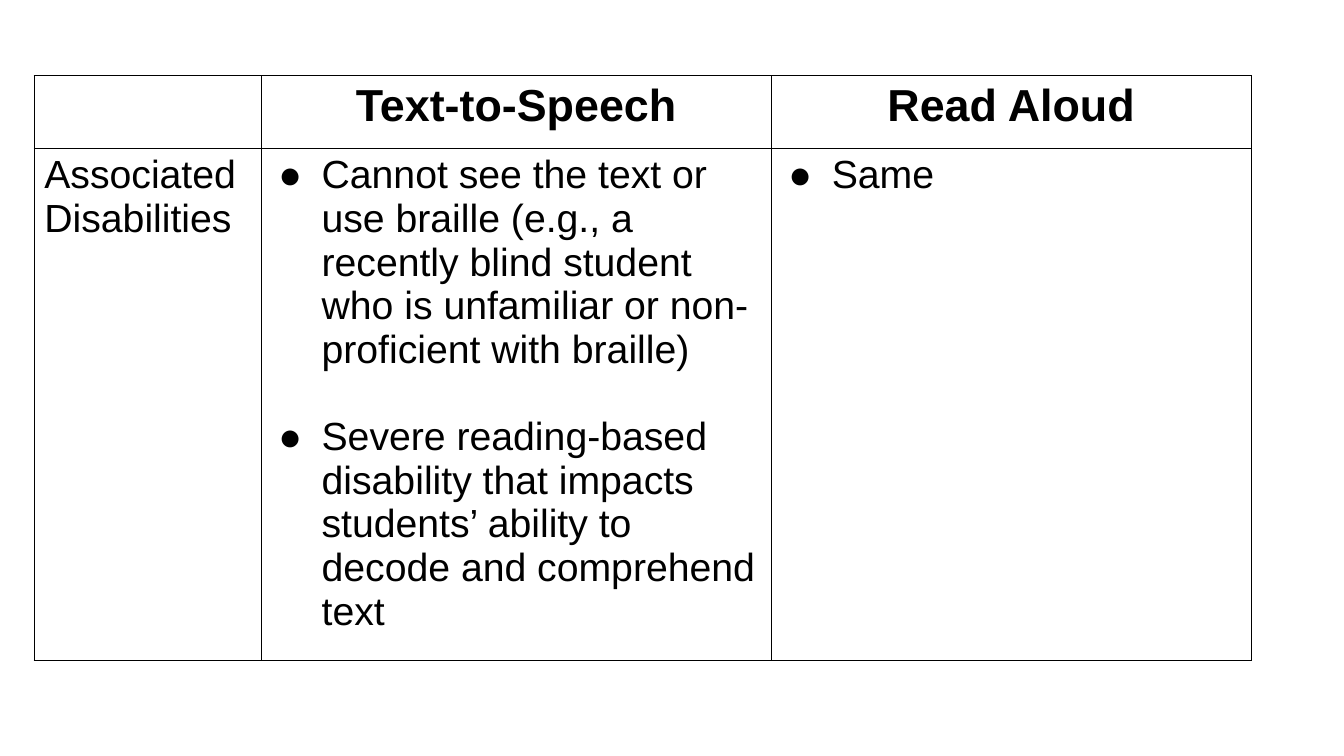
from lxml import etree
from pptx import Presentation
from pptx.dml.color import RGBColor
from pptx.enum.text import PP_ALIGN
from pptx.oxml.ns import qn
from pptx.util import Inches, Pt

CENTER, LEFT = PP_ALIGN.CENTER, PP_ALIGN.LEFT
FONT, BLACK = "Arial", "000000"
COLUMN_WIDTHS = [2.25, 5.06, 4.76]
ROW_HEIGHTS = [0.72, 5.08]
HEADINGS = ["", "Text-to-Speech", "Read Aloud"]
ROW_LABEL = "Associated Disabilities"
TEXT_TO_SPEECH = [
    "Cannot see the text or use braille (e.g., a recently blind student "
    "who is unfamiliar or non-proficient with braille)",
    "Severe reading-based disability that impacts students’ ability to "
    "decode and comprehend text",
]
READ_ALOUD = ["Same"]


def rgb(value):
    """Return the colour for a hex string."""
    return RGBColor.from_string(value)


def add_solid(parent, color):
    """Add a solid colour element to an XML parent."""
    fill = etree.SubElement(parent, qn("a:solidFill"))
    etree.SubElement(fill, qn("a:srgbClr"), val=color)


def style_cell(cell):
    """Give a cell a thin black border and no fill."""
    tc_pr = cell._tc.get_or_add_tcPr()
    for side in ("lnL", "lnR", "lnT", "lnB"):
        line = etree.SubElement(tc_pr, qn(f"a:{side}"), w=str(Pt(1)))
        add_solid(line, BLACK)
    cell.fill.background()


def add_bullet(p):
    """Give a paragraph a hanging round bullet."""
    p_pr = p._p.get_or_add_pPr()
    p_pr.set("marL", str(Inches(0.5)))
    p_pr.set("indent", str(Inches(-0.43)))
    color = etree.SubElement(p_pr, qn("a:buClr"))
    etree.SubElement(color, qn("a:srgbClr"), val=BLACK)
    etree.SubElement(p_pr, qn("a:buFont"), typeface=FONT)
    etree.SubElement(p_pr, qn("a:buChar"), char="●")


def write_cell(cell, texts, size=28, bold=False, align=LEFT, bullets=False):
    """Write one paragraph per text into a cell."""
    tf = cell.text_frame
    for i, text in enumerate(texts):
        p = tf.add_paragraph() if i else tf.paragraphs[0]
        p.alignment = align
        if i:
            p.space_before = Pt(31)
        if bullets:
            add_bullet(p)
        r = p.add_run()
        r.text = text
        r.font.name, r.font.size, r.font.bold = FONT, Pt(size), bold
        r.font.color.rgb = rgb(BLACK)


def add_comparison_table(s, left, top):
    """Place the table comparing text-to-speech with read aloud."""
    table = s.shapes.add_table(
        len(ROW_HEIGHTS), len(COLUMN_WIDTHS), Inches(left), Inches(top),
        Inches(sum(COLUMN_WIDTHS)), Inches(sum(ROW_HEIGHTS))).table
    table.first_row = table.horz_banding = False
    for column, width in zip(table.columns, COLUMN_WIDTHS):
        column.width = Inches(width)
    for row, height in zip(table.rows, ROW_HEIGHTS):
        row.height = Inches(height)
    for cell in table.iter_cells():
        style_cell(cell)
    for i, heading in enumerate(HEADINGS):
        if heading:
            write_cell(table.cell(0, i), [heading], 32, True, CENTER)
    write_cell(table.cell(1, 0), [ROW_LABEL])
    write_cell(table.cell(1, 1), TEXT_TO_SPEECH, bullets=True)
    write_cell(table.cell(1, 2), READ_ALOUD, bullets=True)


def main():
    """Build the slide and save it."""
    prs = Presentation()
    prs.slide_width, prs.slide_height = Inches(13.33), Inches(7.5)
    s = prs.slides.add_slide(prs.slide_layouts[6])
    add_comparison_table(s, 0.34, 0.75)
    prs.save("out.pptx")


if __name__ == "__main__":
    main()
